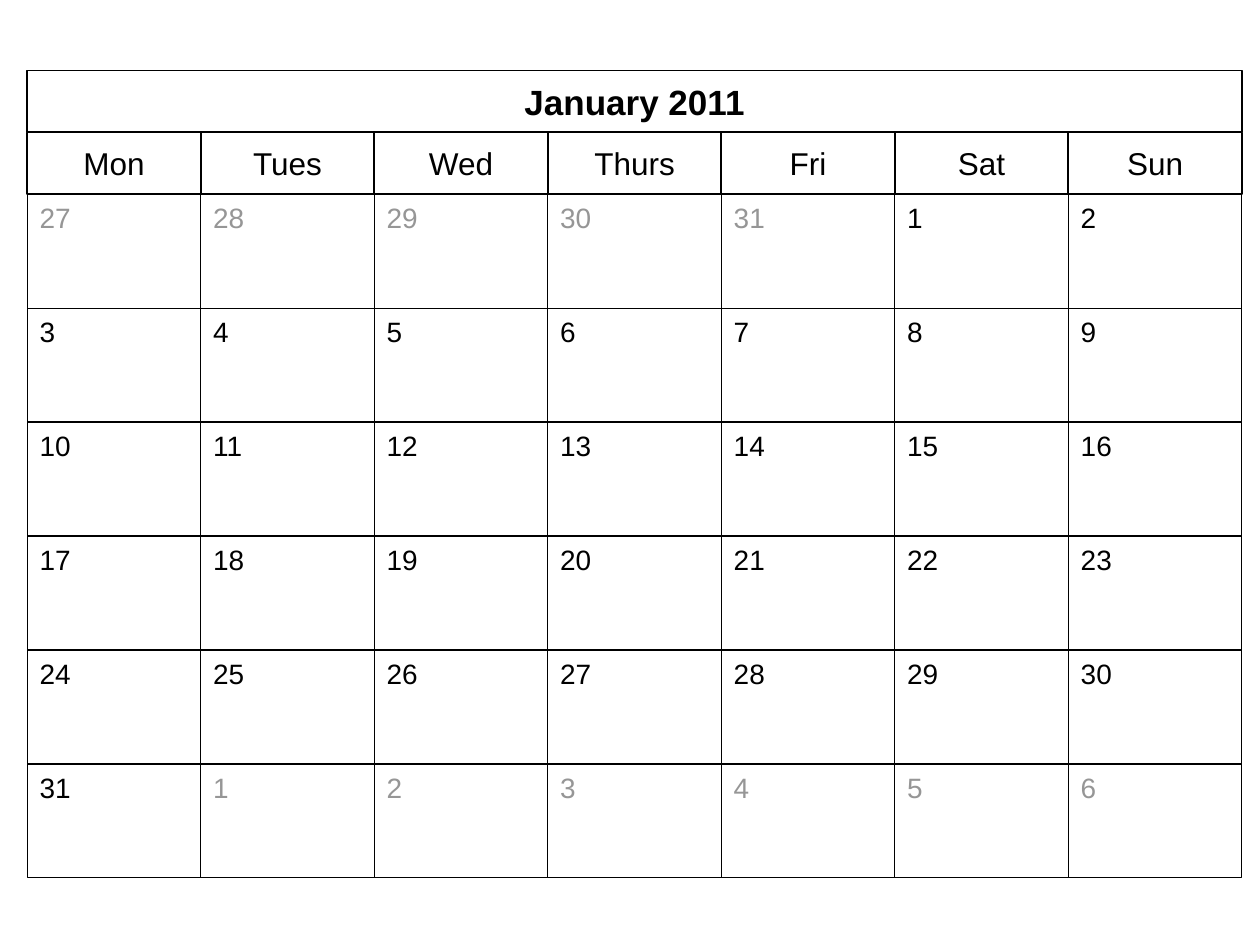
from pptx import Presentation
from pptx.dml.color import RGBColor
from pptx.enum.shapes import MSO_SHAPE
from pptx.enum.text import MSO_ANCHOR, PP_ALIGN
from pptx.util import Pt

LEFT, TOP = 15.6, 40.3
COLUMN_WIDTH, HEADING_HEIGHT, WEEK_HEIGHT = 99.15, 35.35, 65.1
WEEKDAYS = ["Mon", "Tues", "Wed", "Thurs", "Fri", "Sat", "Sun"]
BLACK, GREY, WHITE = "000000", "969696", "FFFFFF"


def colour(hex_code):
    return RGBColor.from_string(hex_code)


def apply_format(target, values):
    for name, value in values.items():
        setattr(target, name, value)


class CalendarSlide:
    """Holds the calendar's style and the slide being drawn."""

    font_name = "Arial"
    heading_frame = {
        "word_wrap": True, "vertical_anchor": MSO_ANCHOR.MIDDLE,
        "margin_top": Pt(1.44), "margin_bottom": Pt(1.44),
    }
    day_frame = {"word_wrap": True, "vertical_anchor": MSO_ANCHOR.TOP}

    def __init__(self, deck):
        self.slide = deck.slides.add_slide(deck.slide_layouts[6])

    def box(self, left, top, width, height, line_width):
        box = self.slide.shapes.add_shape(
            MSO_SHAPE.RECTANGLE, Pt(left), Pt(top), Pt(width), Pt(height))
        box.shadow.inherit = False
        box.line.color.rgb = colour(BLACK)
        box.line.width = Pt(line_width)
        return box

    def label(self, box, text, frame_format, alignment, size, text_colour, bold=False):
        apply_format(box.text_frame, frame_format)
        para = box.text_frame.paragraphs[0]
        para.alignment = alignment
        span = para.add_run()
        span.text = text
        apply_format(span.font, {"name": self.font_name, "size": Pt(size), "bold": bold})
        span.font.color.rgb = colour(text_colour)

    def heading(self, text, left, top, width, size=18, bold=False):
        box = self.box(left, top, width, HEADING_HEIGHT, 1)
        box.fill.solid()
        box.fill.fore_color.rgb = colour(WHITE)
        self.label(box, text, self.heading_frame, PP_ALIGN.CENTER, size, BLACK, bold)

    def day(self, number, left, top, text_colour):
        box = self.box(left, top, COLUMN_WIDTH, WEEK_HEIGHT, 0.75)
        box.fill.background()
        self.label(box, str(number), self.day_frame, PP_ALIGN.LEFT, 16, text_colour)


def main():
    deck = Presentation()
    deck.slide_width, deck.slide_height = Pt(720), Pt(540)
    calendar = CalendarSlide(deck)

    column_lefts = [LEFT + column * COLUMN_WIDTH for column in range(len(WEEKDAYS))]
    for weekday, left in zip(WEEKDAYS, column_lefts):
        calendar.heading(weekday, left, TOP + HEADING_HEIGHT, COLUMN_WIDTH)
    calendar.heading("January 2011", LEFT, TOP, len(WEEKDAYS) * COLUMN_WIDTH,
                     size=20, bold=True)

    days = [(number, GREY) for number in range(27, 32)]
    days += [(number, BLACK) for number in range(1, 32)]
    days += [(number, GREY) for number in range(1, 7)]
    weeks_top = TOP + 2 * HEADING_HEIGHT
    for index, (number, text_colour) in enumerate(days):
        week, column = divmod(index, len(WEEKDAYS))
        calendar.day(number, column_lefts[column], weeks_top + week * WEEK_HEIGHT, text_colour)

    deck.save("out.pptx")


if __name__ == "__main__":
    main()
